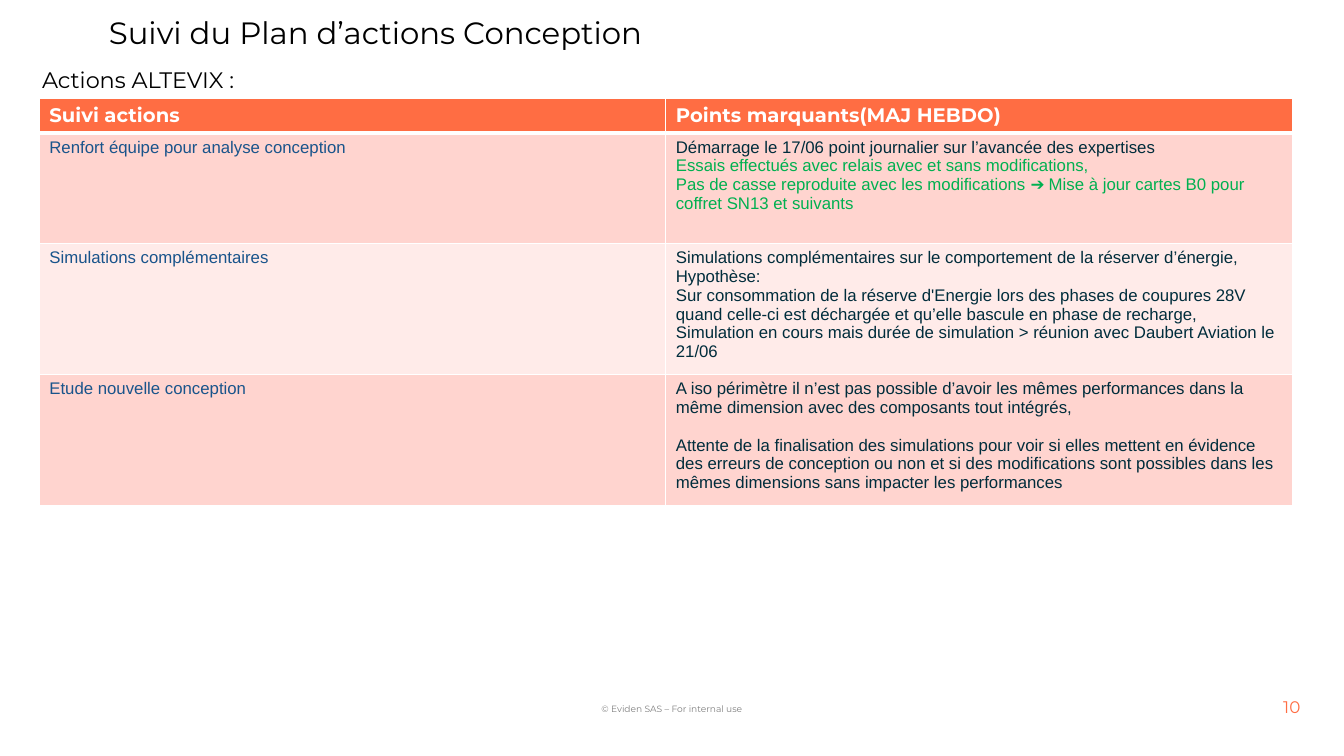
"""Build the weekly follow-up slide for the design action plan."""
from lxml import etree
from pptx import Presentation, util as u
from pptx.dml.color import RGBColor
from pptx.enum import text
from pptx.oxml.ns import qn

ORANGE = RGBColor(0xFF, 0x6D, 0x43)
ROSE = RGBColor(0xFF, 0xD4, 0xCF)
PALE_ROSE = RGBColor(0xFF, 0xEB, 0xE9)
BLUE = RGBColor(0x19, 0x54, 0x8B)
NAVY = RGBColor(0x00, 0x2D, 0x3C)
GREEN = RGBColor(0x00, 0xB0, 0x50)
GREY = RGBColor(0x80, 0x80, 0x80)
BLACK = RGBColor(0, 0, 0)
WHITE = RGBColor(0xFF, 0xFF, 0xFF)

HEADINGS = ["Suivi actions", "Points marquants(MAJ HEBDO)"]
ACTIONS = [
    ("Renfort équipe pour analyse conception", [
        ("Démarrage le 17/06 point journalier sur l’avancée des expertises", NAVY, 0),
        ("Essais effectués avec relais avec et sans modifications,", GREEN, 0),
        ("Pas de casse reproduite avec les modifications ➔ Mise à jour cartes B0 "
         "pour coffret SN13 et suivants", GREEN, 0)]),
    ("Simulations complémentaires", [
        ("Simulations complémentaires sur le comportement de la réserver d’énergie,", NAVY, 0),
        ("Hypothèse:", NAVY, 0),
        ("Sur consommation de la réserve d'Energie lors des phases de coupures 28V "
         "quand celle-ci est déchargée et qu’elle bascule en phase de recharge,", NAVY, 0),
        ("Simulation en cours mais durée de simulation > réunion avec "
         "Daubert Aviation le 21/06", NAVY, 0)]),
    ("Etude nouvelle conception", [
        ("A iso périmètre il n’est pas possible d’avoir les mêmes performances dans la "
         "même dimension avec des composants tout intégrés,", NAVY, 0),
        ("Attente de la finalisation des simulations pour voir si elles mettent en évidence "
         "des erreurs de conception ou non et si des modifications sont possibles dans les "
         "mêmes dimensions sans impacter les performances", NAVY, 13.4)]),
]
ROW_HEIGHTS = [24.3, 79, 93.5, 93.5]


class ActionSlide:
    """Hold the style and the current slide."""

    heading_font = "Montserrat"
    body_font = "Arial"

    def __init__(self, deck):
        self.slide = deck.slides.add_slide(deck.slide_layouts[5])

    def style(self, paragraph, font, size, color, bold=False):
        """Format every run of a paragraph."""
        for run in paragraph.runs:
            run.font.name, run.font.size, run.font.bold = font, u.Pt(size), bold
            run.font.color.rgb = color

    def label(self, shape, words, box, size, color, align=text.PP_ALIGN.LEFT,
              anchor=text.MSO_ANCHOR.TOP, insets=(7.2, 3.6), wrap=True):
        """Place a shape and fill it with one line of text."""
        shape.left, shape.top, shape.width, shape.height = map(u.Pt, box)
        frame = shape.text_frame
        frame.text = words
        frame.word_wrap = wrap
        frame.auto_size = text.MSO_AUTO_SIZE.NONE
        frame.vertical_anchor = anchor
        frame.margin_left = frame.margin_right = u.Pt(insets[0])
        frame.margin_top = frame.margin_bottom = u.Pt(insets[1])
        frame.paragraphs[0].alignment = align
        self.style(frame.paragraphs[0], self.heading_font, size, color)

    def title(self, words, box):
        """Fill the title placeholder."""
        self.label(self.slide.shapes.title, words, box, 22, BLACK, insets=(7.2, 0))

    def note(self, words, box, size, color, **layout):
        """Add a text box."""
        self.label(self.slide.shapes.add_textbox(0, 0, 0, 0), words, box, size, color, **layout)

    def cell(self, cell, fill, lines, font, size, bold=False, top=1, bottom=1):
        """Give a cell its borders, fill and paragraphs of (words, colour, space before)."""
        for side, width in zip("LRTB", (1, 1, top, bottom)):
            line = etree.SubElement(cell._tc.get_or_add_tcPr(), qn(f"a:ln{side}"), w=str(u.Pt(width)))
            solid = etree.SubElement(line, qn("a:solidFill"))
            etree.SubElement(solid, qn("a:srgbClr"), val=str(WHITE))
        cell.fill.solid()
        cell.fill.fore_color.rgb = fill
        cell.text_frame.text = "\n".join(words for words, _, _ in lines)
        for paragraph, (_, color, gap) in zip(cell.text_frame.paragraphs, lines):
            if gap:
                paragraph.space_before = u.Pt(gap)
            self.style(paragraph, font, size, color, bold)

    def action_table(self, left, top, column_width):
        """Add the table of actions under its headings."""
        table = self.slide.shapes.add_table(
            len(ROW_HEIGHTS), len(HEADINGS), u.Pt(left), u.Pt(top),
            u.Pt(column_width * len(HEADINGS)), u.Pt(sum(ROW_HEIGHTS))).table
        table.horz_banding = False
        for column in table.columns:
            column.width = u.Pt(column_width)
        for row, height in zip(table.rows, ROW_HEIGHTS):
            row.height = u.Pt(height)
        for col, heading in enumerate(HEADINGS):
            self.cell(table.cell(0, col), ORANGE, [(heading, WHITE, 0)],
                      self.heading_font, 14, bold=True, bottom=3)
        for row, (action, points) in enumerate(ACTIONS, 1):
            fill = ROSE if row % 2 else PALE_ROSE
            for col, lines in enumerate(([(action, BLUE, 0)], points)):
                self.cell(table.cell(row, col), fill, lines, self.body_font, 12,
                          top=3 if row == 1 else 1)


def main():
    deck = Presentation()
    deck.slide_width, deck.slide_height = u.Pt(960), u.Pt(540)
    page = ActionSlide(deck)
    page.title("Suivi du Plan d’actions Conception", (70.6, 10, 904, 27.4))
    page.action_table(28.1, 70.6, 447.5)
    page.note("Actions ALTEVIX :", (23, 44, 904, 26.6), 16, BLACK)
    page.note("© Eviden SAS – For internal use", (429, 502.5, 102, 8), 6.5, GREY,
              align=text.PP_ALIGN.CENTER, anchor=text.MSO_ANCHOR.MIDDLE,
              insets=(0, 0), wrap=False)
    page.note("10", (900, 496, 36, 17.3), 12, ORANGE,
              align=text.PP_ALIGN.RIGHT, anchor=text.MSO_ANCHOR.MIDDLE)
    deck.save("out.pptx")


if __name__ == "__main__":
    main()
